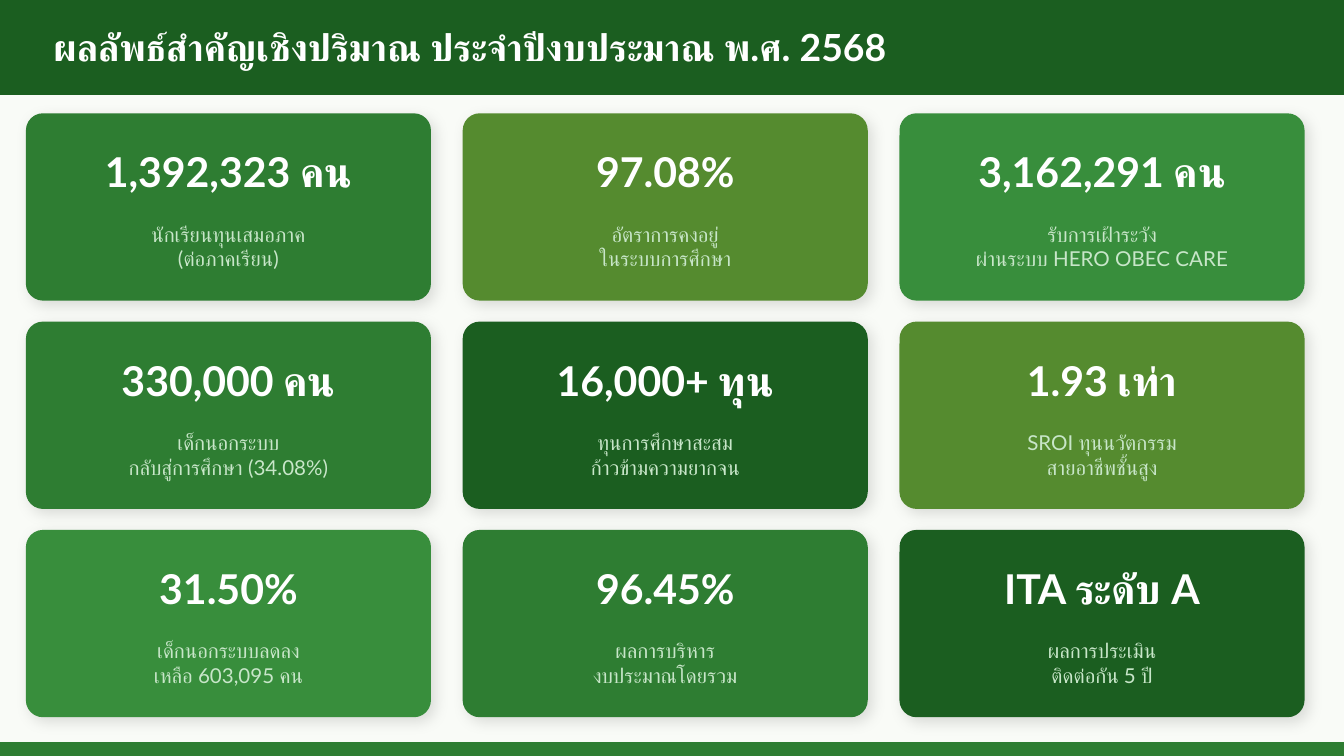
from lxml.etree import SubElement
from pptx import Presentation
from pptx.dml.color import RGBColor
from pptx.enum.shapes import MSO_SHAPE as Shape
from pptx.enum.text import MSO_ANCHOR as Anchor, PP_ALIGN as Align
from pptx.oxml import parse_xml
from pptx.oxml.ns import nsdecls, qn
from pptx.util import Inches, Pt

FONT = "Lato"
WHITE = RGBColor(0xFF, 0xFF, 0xFF)
PAPER = RGBColor(0xF9, 0xFB, 0xF7)
MINT = RGBColor(0xC8, 0xE6, 0xC9)
DARK = RGBColor(0x1B, 0x5E, 0x20)
GREEN = RGBColor(0x2E, 0x7D, 0x32)
LIGHT = RGBColor(0x38, 0x8E, 0x3C)
OLIVE = RGBColor(0x55, 0x8B, 0x2F)

SOFT_SHADOW = f"""<a:effectLst {nsdecls("a")}>
  <a:outerShdw blurRad="{Pt(8)}" dist="{Pt(3)}" dir="2700000" algn="bl" rotWithShape="0">
    <a:srgbClr val="000000"><a:alpha val="13000"/></a:srgbClr>
  </a:outerShdw>
</a:effectLst>"""

deck = Presentation()
deck.slide_width = Inches(10)
deck.slide_height = Inches(10) * 9 // 16
page = deck.slides.add_slide(deck.slide_layouts[6])
page.background.fill.solid()
page.background.fill.fore_color.rgb = PAPER


def add_block(kind, left, top, width, height, color):
    block = page.shapes.add_shape(
        kind, Inches(left), Inches(top), Inches(width), Inches(height))
    block.shadow.inherit = False
    block.fill.solid()
    block.fill.fore_color.rgb = color
    block.line.color.rgb = color
    block.line.width = Pt(1)
    return block


def add_text(text, left, top, width, height, size=11, color=WHITE,
             bold=False, align=Align.CENTER, anchor=Anchor.MIDDLE):
    box = page.shapes.add_textbox(
        Inches(left), Inches(top), Inches(width), Inches(height))
    frame = box.text_frame
    frame.word_wrap = True
    frame.vertical_anchor = anchor
    frame.text = text
    for para in frame.paragraphs:
        para.alignment = align
        for span in para.runs:
            span.font.name = FONT
            span.font.size = Pt(size)
            span.font.bold = bold
            span.font.color.rgb = color
            # Thai letters take the complex-script font
            SubElement(span.font._element, qn("a:cs"), typeface=FONT)


# Title band
add_block(Shape.RECTANGLE, 0, 0, 10, 0.7, DARK)
add_text("ผลลัพธ์สำคัญเชิงปริมาณ ประจำปีงบประมาณ พ.ศ. 2568",
         0.3, 0, 9.4, 0.7, size=20, bold=True, align=Align.LEFT)

# Result cards in a grid of three columns
CARDS = [
    ("1,392,323 คน", "นักเรียนทุนเสมอภาค\n(ต่อภาคเรียน)", GREEN),
    ("97.08%", "อัตราการคงอยู่\nในระบบการศึกษา", OLIVE),
    ("3,162,291 คน", "รับการเฝ้าระวัง\nผ่านระบบ HERO OBEC CARE", LIGHT),
    ("330,000 คน", "เด็กนอกระบบ\nกลับสู่การศึกษา (34.08%)", GREEN),
    ("16,000+ ทุน", "ทุนการศึกษาสะสม\nก้าวข้ามความยากจน", DARK),
    ("1.93 เท่า", "SROI ทุนนวัตกรรม\nสายอาชีพชั้นสูง", OLIVE),
    ("31.50%", "เด็กนอกระบบลดลง\nเหลือ 603,095 คน", LIGHT),
    ("96.45%", "ผลการบริหาร\nงบประมาณโดยรวม", GREEN),
    ("ITA ระดับ A", "ผลการประเมิน\nติดต่อกัน 5 ปี", DARK),
]
CARD_WIDTH, CARD_HEIGHT, RADIUS = 3, 1.38, 0.12

for index, (figure, label, color) in enumerate(CARDS):
    row, column = divmod(index, 3)
    left = 0.2 + column * 3.25
    top = 0.85 + row * 1.55
    card = add_block(Shape.ROUNDED_RECTANGLE, left, top,
                     CARD_WIDTH, CARD_HEIGHT, color)
    card.adjustments[0] = RADIUS / CARD_HEIGHT
    properties = card._element.spPr
    properties.replace(properties.find(qn("a:effectLst")), parse_xml(SOFT_SHADOW))
    add_text(figure, left, top + 0.05, CARD_WIDTH, 0.75, size=22, bold=True)
    add_text(label, left, top + 0.75, CARD_WIDTH, 0.55, color=MINT,
             anchor=Anchor.TOP)

# Footer strip
add_block(Shape.RECTANGLE, 0, 5.53, 10, 0.1, GREEN)

deck.save("out.pptx")
